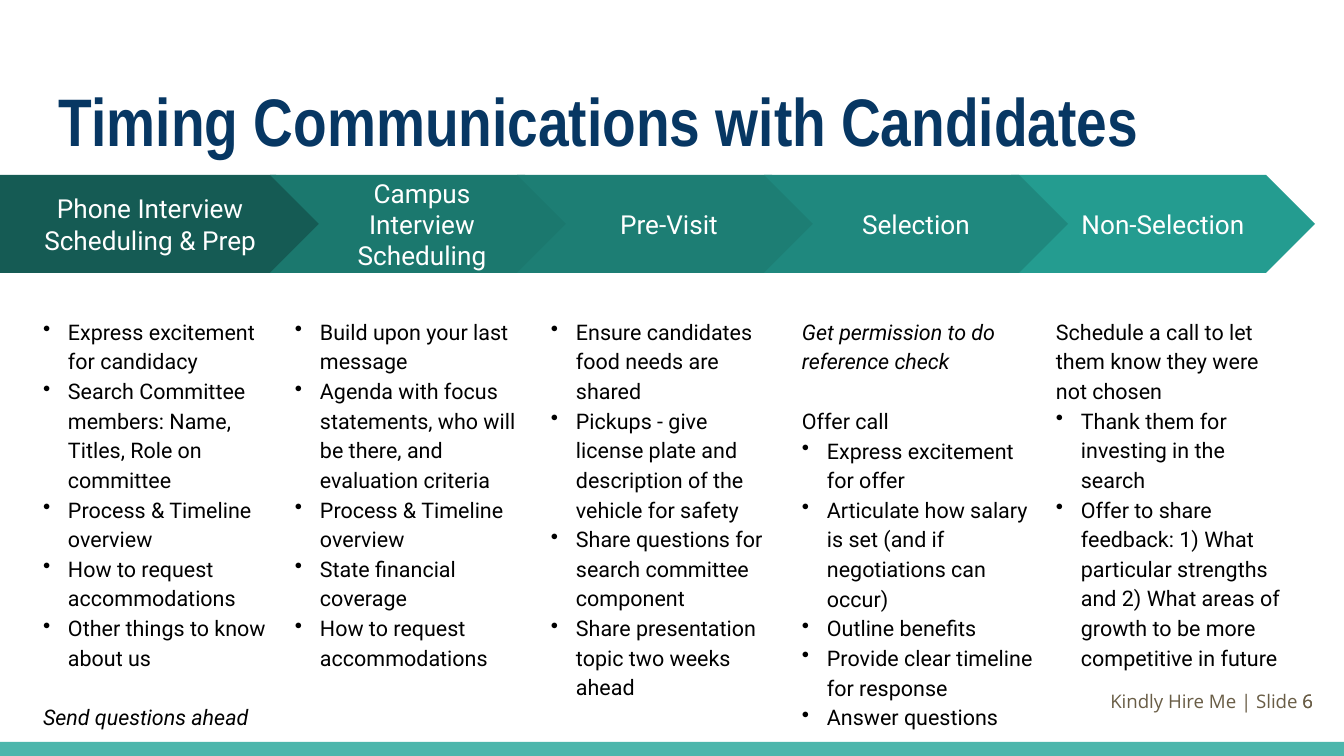
import pptx
import pptx.dml.color
import pptx.enum.shapes
import pptx.enum.text
import pptx.oxml.ns
import pptx.util
from lxml import etree

ALIGN = pptx.enum.text.PP_ALIGN
ANCHOR = pptx.enum.text.MSO_ANCHOR
PRESET = pptx.enum.shapes.MSO_SHAPE

COLORS = {
    "title": "073763",
    "body": "000000",
    "label": "FFFFFF",
    "footer": "695D46",
    "bar": "4DB6AC",
}

BULLET, PLAIN, ITALIC = "bullet", "plain", "italic"

STAGES = [
    {"name": "Phone Interview Scheduling & Prep", "fill": "155B54",
     "arrow": (0, 325), "column": (30, 253), "notes": [
         (BULLET, "Express excitement for candidacy"),
         (BULLET, "Search Committee members: Name, Titles, Role on committee"),
         (BULLET, "Process & Timeline overview"),
         (BULLET, "How to request accommodations"),
         (BULLET, "Other things to know about us"),
         (ITALIC, "Send questions ahead")]},
    {"name": "Campus Interview Scheduling", "fill": "1B786E",
     "arrow": (270, 304), "column": (282, 253), "notes": [
         (BULLET, "Build upon your last message"),
         (BULLET, "Agenda with focus statements, who will be there, and evaluation criteria"),
         (BULLET, "Process & Timeline overview"),
         (BULLET, "State financial coverage"),
         (BULLET, "How to request accommodations")]},
    {"name": "Pre-Visit", "fill": "1D7E74",
     "arrow": (517, 304), "column": (538, 251), "notes": [
         (BULLET, "Ensure candidates food needs are shared"),
         (BULLET, "Pickups - give license plate and description of the vehicle for safety"),
         (BULLET, "Share questions for search committee component"),
         (BULLET, "Share presentation topic two weeks ahead")]},
    {"name": "Non-Selection", "fill": "249C90",
     "arrow": (1011, 304), "column": (1043, 251), "notes": [
         (PLAIN, "Schedule a call to let them know they were not chosen"),
         (BULLET, "Thank them for investing in the search"),
         (BULLET, "Offer to share feedback: 1) What particular strengths and "
                  "2) What areas of growth to be more competitive in future")]},
    {"name": "Selection", "fill": "1F887E",
     "arrow": (764, 304), "column": (789, 258), "notes": [
         (ITALIC, "Get permission to do reference check"),
         (PLAIN, "Offer call"),
         (BULLET, "Express excitement for offer"),
         (BULLET, "Articulate how salary is set (and if negotiations can occur)"),
         (BULLET, "Outline benefits"),
         (BULLET, "Provide clear timeline for response"),
         (BULLET, "Answer questions")]},
]


def px(length):
    """Turn px into EMU."""
    return pptx.util.Emu(round(length * 914400 / 134.4))


def rgb(value):
    """Turn a hex string into a colour."""
    return pptx.dml.color.RGBColor.from_string(value)


def set_font(paragraph, name, size, color, bold=False, italic=False):
    """Set the font of a whole paragraph."""
    font = paragraph.font
    font.name, font.size = name, pptx.util.Pt(size)
    font.bold, font.italic = bold, italic
    font.color.rgb = rgb(color)


def set_frame(shape, anchor):
    """Give a shape's text its insets, wrapping and anchor."""
    frame = shape.text_frame
    frame.word_wrap = True
    frame.vertical_anchor = anchor
    frame.margin_left = frame.margin_right = px(13)
    frame.margin_top = frame.margin_bottom = px(13)
    return frame


def add_text_box(slide, box, anchor=ANCHOR.TOP):
    """Add an empty text box and return its frame."""
    return set_frame(slide.shapes.add_textbox(*map(px, box)), anchor)


def add_filled_shape(slide, preset, box, color):
    """Add a flat shape with no outline."""
    shape = slide.shapes.add_shape(preset, *map(px, box))
    shape.shadow.inherit = False
    shape.fill.solid()
    shape.fill.fore_color.rgb = rgb(color)
    shape.line.fill.background()
    return shape


def add_bullet(paragraph):
    """Give a paragraph a hanging bullet."""
    properties = paragraph._p.get_or_add_pPr()
    properties.set("marL", str(px(25)))
    properties.set("indent", str(-px(25)))
    bullet = etree.SubElement(properties, pptx.oxml.ns.qn("a:buChar"))
    bullet.set("char", "•")


def add_title(slide, box):
    """Write the slide title."""
    paragraph = add_text_box(slide, box).paragraphs[0]
    paragraph.text = "Timing Communications with Candidates"
    set_font(paragraph, "Arial Narrow", 36, COLORS["title"], bold=True)


def add_footer(slide, box):
    """Write the slide number and the footer line that ends on it."""
    for text in ("6", "Kindly Hire Me | Slide 6"):
        paragraph = add_text_box(slide, box, ANCHOR.MIDDLE).paragraphs[0]
        paragraph.text = text
        paragraph.alignment = ALIGN.RIGHT
        set_font(paragraph, "Open Sans", 10, COLORS["footer"])


def add_stage_arrow(slide, box, stage):
    """Draw the arrow that names a stage; the first one has a flat start."""
    preset = PRESET.PENTAGON if box[0] == 0 else PRESET.CHEVRON
    shape = add_filled_shape(slide, preset, box, stage["fill"])
    paragraph = set_frame(shape, ANCHOR.MIDDLE).paragraphs[0]
    paragraph.text = stage["name"]
    paragraph.alignment = ALIGN.CENTER
    set_font(paragraph, "Roboto", 14, COLORS["label"])


def add_stage_notes(slide, box, notes):
    """Write a stage's notes, with a line's gap where a new block starts."""
    frame = add_text_box(slide, box)
    previous = None
    for kind, text in notes:
        paragraph = frame.add_paragraph() if previous else frame.paragraphs[0]
        paragraph.text = text
        paragraph.line_spacing = 1.15
        if previous and kind != BULLET:
            paragraph.space_before = pptx.util.Pt(16)
        if kind == BULLET:
            add_bullet(paragraph)
        set_font(paragraph, "Roboto", 11.5, COLORS["body"], italic=kind == ITALIC)
        previous = kind


def add_stage(slide, top, stage):
    """Place a stage's arrow and the notes under it."""
    left, width = stage["arrow"]
    add_stage_arrow(slide, (left, top, width, 98), stage)
    left, width = stage["column"]
    add_stage_notes(slide, (left, top + 127, width, 345), stage["notes"])


def main():
    """Build and save the slide."""
    presentation = pptx.Presentation()
    presentation.slide_width, presentation.slide_height = px(1344), px(756)
    slide = presentation.slides.add_slide(presentation.slide_layouts[6])
    add_filled_shape(slide, PRESET.RECTANGLE, (0, 742, 1344, 14), COLORS["bar"])
    add_title(slide, (46, 66, 1253, 103))
    add_footer(slide, (1075, 672, 251, 58))
    for stage in STAGES:
        add_stage(slide, 175, stage)
    presentation.save("out.pptx")


if __name__ == "__main__":
    main()
